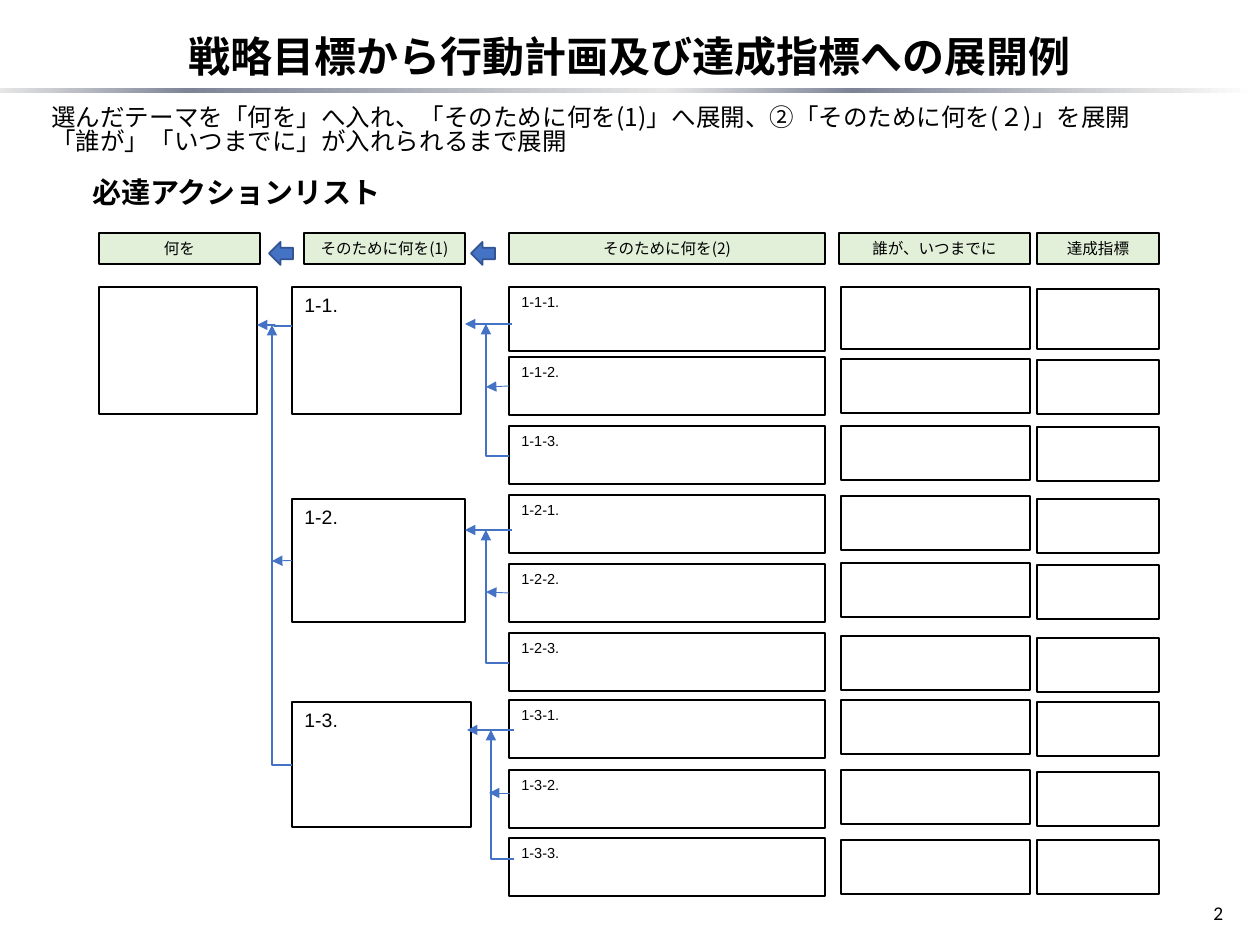
import lxml.etree
import pptx
import pptx.dml.color
import pptx.enum.shapes
import pptx.enum.text
import pptx.oxml
import pptx.oxml.ns
import pptx.util

SHAPE = pptx.enum.shapes.MSO_SHAPE
CONNECTOR = pptx.enum.shapes.MSO_CONNECTOR
ALIGN = pptx.enum.text.PP_ALIGN
ANCHOR = pptx.enum.text.MSO_ANCHOR
qn = pptx.oxml.ns.qn

PX = 914400 / 126
COLORS = {"ink": "000000", "header": "E2F0D9", "flow": "4472C4", "flow_edge": "325491",
          "white": "FFFFFF", "silver": "E6E6E6", "slate": "7D8496"}
JAPANESE, LATIN, NUMBER = "Noto Sans CJK JP", "Arial", "Calibri"
RULE_STOPS = [(0, "white"), (7, "silver"), (32, "slate"),
              (47, "silver"), (85, "slate"), (100, "silver")]

HEADERS = [("何を", 99, 161), ("そのために何を(1)", 304, 161), ("そのために何を(2)", 509, 316),
           ("誰が、いつまでに", 839, 191), ("達成指標", 1037, 122)]
GOALS = [("1-1.", 287, 169, 127), ("1-2.", 499, 173, 123), ("1-3.", 702, 179, 125)]
# column left, width, usual height, height of the first row, tops of the nine rows
ACTION_COLUMN = (509, 316, 58, 64, [287, 357, 426, 495, 564, 633, 700, 770, 838])
OWNER_COLUMN = (841, 189, 54, 62, [287, 359, 426, 496, 563, 636, 700, 770, 840])
METRIC_COLUMN = (1037, 122, 54, 60, [289, 360, 427, 499, 565, 638, 702, 772, 840])
# spine x, top arrow y, right end, left end, bottom branch y and right end, middle branch y
BRANCHES = [(486, 324, 512, 465, 456, 509, 387),
            (486, 530, 512, 465, 663, 509, 592),
            (491, 730, 514, 467, 859, 514, 793)]


def px(length):
    return round(length * PX)


def rgb(name):
    return pptx.dml.color.RGBColor.from_string(COLORS[name])


class Sheet:
    def __init__(self, slide):
        self.shapes = slide.shapes

    def fill_text(self, frame, lines, size, font, bold=False, align=ALIGN.LEFT,
                  anchor=ANCHOR.TOP, spacing=None):
        frame.word_wrap = True
        frame.vertical_anchor = anchor
        frame.text = "\n".join(lines)
        for paragraph in frame.paragraphs:
            paragraph.alignment = align
            paragraph.line_spacing = spacing
            for run in paragraph.runs:
                run.font.size = pptx.util.Pt(size)
                run.font.name = font
                run.font.bold = bold
                run.font.color.rgb = rgb("ink")
                east_asian = lxml.etree.Element(qn("a:ea"), typeface=font)
                run.font._element.find(qn("a:latin")).addnext(east_asian)

    def text(self, box, lines, size, font, **style):
        area = self.shapes.add_textbox(*map(px, box))
        self.fill_text(area.text_frame, lines, size, font, **style)

    def shape(self, kind, box, fill=None, line=None, weight=0.75):
        shape = self.shapes.add_shape(kind, *map(px, box))
        shape.shadow.inherit = False
        if fill:
            shape.fill.solid()
            shape.fill.fore_color.rgb = rgb(fill)
        else:
            shape.fill.background()
        if line:
            shape.line.color.rgb = rgb(line)
            shape.line.width = pptx.util.Pt(weight)
        else:
            shape.line.fill.background()
        return shape

    def cell(self, box, label="", size=8.3):
        cell = self.shape(SHAPE.RECTANGLE, box, line="ink")
        if label:
            self.fill_text(cell.text_frame, [label], size, LATIN)
        return cell

    def header(self, label, left, width):
        header = self.shape(SHAPE.RECTANGLE, (left, 233, width, 31), "header", "ink")
        header.text_frame.margin_top = header.text_frame.margin_bottom = 0
        self.fill_text(header.text_frame, [label], 8.9, JAPANESE,
                       align=ALIGN.CENTER, anchor=ANCHOR.MIDDLE)

    def column(self, left, width, height, first_height, tops, labels):
        return [self.cell((left, top, width, height if row else first_height), label)
                for row, (top, label) in enumerate(zip(tops, labels))]

    def gradient_rule(self, box):
        rule = self.shape(SHAPE.RECTANGLE, box)
        stops = "".join(f'<a:gs pos="{at * 1000}"><a:srgbClr val="{COLORS[name]}"/></a:gs>'
                        for at, name in RULE_STOPS)
        gradient = pptx.oxml.parse_xml(
            f'<a:gradFill {pptx.oxml.ns.nsdecls("a")}><a:gsLst>{stops}</a:gsLst>'
            '<a:lin ang="10800000" scaled="0"/></a:gradFill>')
        properties = rule._element.spPr
        properties.replace(properties.find(qn("a:noFill")), gradient)

    def arrow(self, start, end, weight=1.5, bend=None, source=None):
        """Draw an arrow; bend names an elbow preset, source is a box left by its left side."""
        kind = CONNECTOR.ELBOW if bend else CONNECTOR.STRAIGHT
        arrow = self.shapes.add_connector(kind, *map(px, start + end))
        if source is not None:
            arrow.begin_connect(source, 1)
        arrow.line.color.rgb = rgb("flow")
        arrow.line.width = pptx.util.Pt(weight)
        properties = arrow._element.spPr
        if bend:
            properties.find(qn("a:prstGeom")).set("prst", bend)
        lxml.etree.SubElement(properties.find(qn("a:ln")), qn("a:tailEnd"), type="triangle")
        lxml.etree.SubElement(properties, qn("a:effectLst"))


def main():
    deck = pptx.Presentation()
    deck.slide_width, deck.slide_height = px(1260), px(945)
    sheet = Sheet(deck.slides.add_slide(deck.slide_layouts[6]))

    sheet.gradient_rule((0, 88, 1255, 5))
    sheet.text((1201, 895, 59, 36), ["2"], 11.1, NUMBER, anchor=ANCHOR.MIDDLE)
    sheet.text((48, 24, 1163, 63), ["戦略目標から行動計画及び達成指標への展開例"], 24, JAPANESE,
               bold=True, align=ALIGN.CENTER, anchor=ANCHOR.MIDDLE)
    sheet.text((39, 101, 1174, 72),
               ["選んだテーマを「何を」へ入れ、「そのために何を(1)」へ展開、②「そのために何を(２)」を展開",
                "「誰が」「いつまでに」が入れられるまで展開"], 14, JAPANESE, spacing=0.82)
    sheet.text((80, 168, 1099, 48), ["必達アクションリスト"], 16.6, JAPANESE,
               bold=True, anchor=ANCHOR.MIDDLE)

    for header in HEADERS:
        sheet.header(*header)
    for left in (269, 471):
        sheet.shape(SHAPE.LEFT_ARROW, (left, 242, 24, 23), "flow", "flow_edge", 1)

    sheet.cell((99, 287, 158, 127))
    goals = [sheet.cell((292, top, width, height), label, 11.1)
             for label, top, width, height in GOALS]
    action_labels = [f"1-{goal}-{step}." for goal in (1, 2, 3) for step in (1, 2, 3)]
    actions = sheet.column(*ACTION_COLUMN, action_labels)
    for blank_column in (OWNER_COLUMN, METRIC_COLUMN):
        sheet.column(*blank_column, [""] * 9)

    sheet.arrow((292, 326), (257, 325), bend="bentConnector3")
    sheet.arrow((292, 765), (272, 325), bend="bentConnector2")
    sheet.arrow((292, 561), (272, 561), 0.5, source=goals[1])
    for group, (spine, top, right, left, bottom, bottom_right, middle) in enumerate(BRANCHES):
        sheet.arrow((right, top), (left, top))
        sheet.arrow((bottom_right, bottom), (spine, top), bend="bentConnector2")
        joined = actions[group * 3 + 1] if group < 2 else None
        sheet.arrow((510, middle), (spine - group // 2 * 2, middle), 0.5, source=joined)

    deck.save("out.pptx")


if __name__ == "__main__":
    main()
